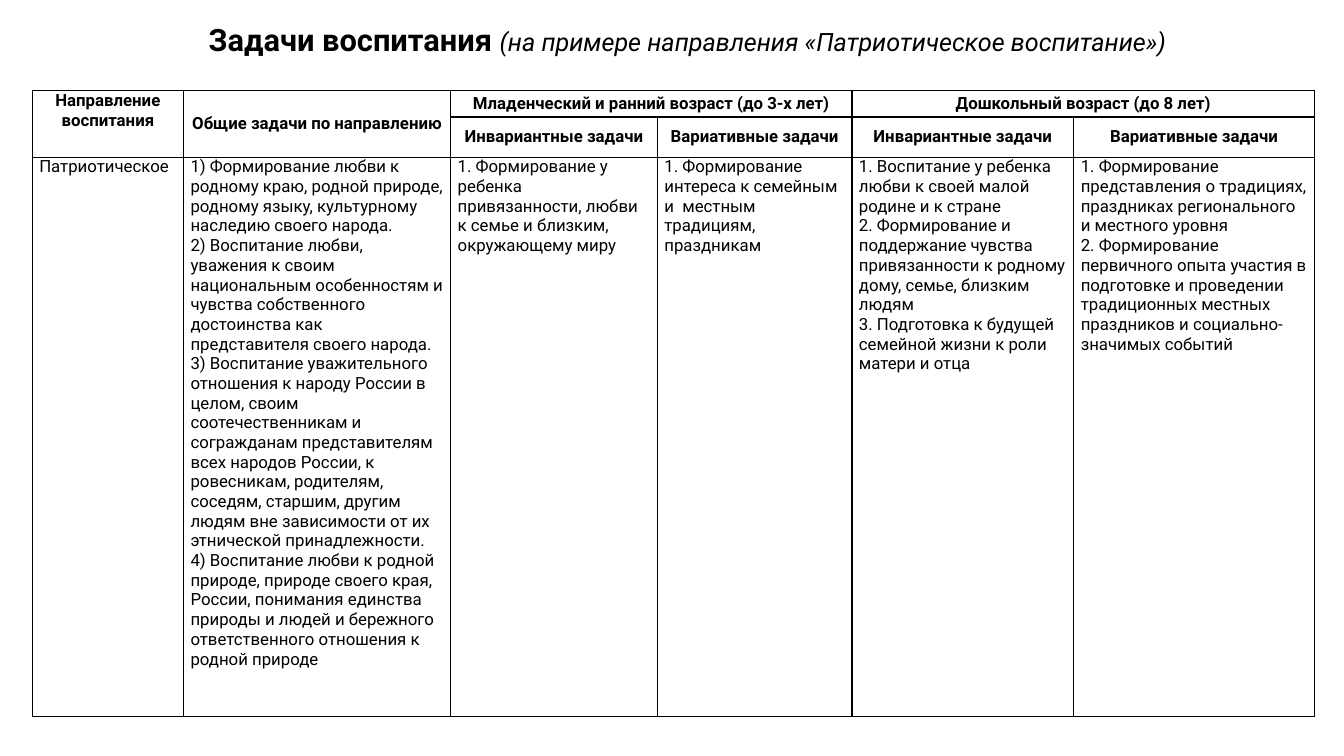
"""Build a one-slide table of patriotic upbringing tasks by age group."""
from dataclasses import dataclass

from lxml.etree import SubElement
from pptx import Presentation
from pptx.dml.color import RGBColor
from pptx.enum.text import MSO_ANCHOR, MSO_AUTO_SIZE, PP_ALIGN
from pptx.oxml.ns import qn
from pptx.slide import Slide
from pptx.table import Table, _Cell
from pptx.text.text import Font
from pptx.util import Inches, Pt

FONT = "Roboto"
BLACK = "000000"
WHITE = "FFFFFF"
COLUMN_WIDTHS = (1.5, 2.65, 2.05, 1.93, 2.2, 2.39)
ROW_HEIGHTS = (0.26, 0.26, 5.55)


@dataclass(frozen=True)
class Heading:
    row: int
    column: int
    text: str
    rows: int = 1
    columns: int = 1
    anchor: MSO_ANCHOR = MSO_ANCHOR.MIDDLE


@dataclass(frozen=True)
class TitlePart:
    text: str
    size: float
    bold: bool = False
    italic: bool = False


TITLE = (
    TitlePart("Задачи воспитания ", 22, bold=True),
    TitlePart("(на примере направления «Патриотическое воспитание»)", 18, italic=True),
)
HEADINGS = (
    Heading(0, 0, "Направление воспитания", rows=2, anchor=MSO_ANCHOR.TOP),
    Heading(0, 1, "Общие задачи по направлению", rows=2),
    Heading(0, 2, "Младенческий и ранний возраст (до 3-х лет)", columns=2),
    Heading(0, 4, "Дошкольный возраст (до 8 лет)", columns=2),
    *(Heading(1, column, "Инвариантные задачи") for column in (2, 4)),
    *(Heading(1, column, "Вариативные задачи") for column in (3, 5)),
)
TASKS = (
    ("Патриотическое",),
    (
        "1) Формирование любви к родному краю, родной природе, родному языку, "
        "культурному наследию своего народа.",
        "2) Воспитание любви, уважения к своим национальным особенностям и чувства "
        "собственного достоинства как представителя своего народа.",
        "3) Воспитание уважительного отношения к народу России в целом, своим "
        "соотечественникам и согражданам представителям всех народов России, к "
        "ровесникам, родителям, соседям, старшим, другим людям вне зависимости от их "
        "этнической принадлежности.",
        "4) Воспитание любви к родной природе, природе своего края, России, понимания "
        "единства природы и людей и бережного ответственного отношения к родной природе",
    ),
    (
        "1. Формирование у ребенка привязанности, любви к семье и близким, "
        "окружающему миру",
    ),
    ("1. Формирование интереса к семейным и  местным традициям, праздникам",),
    (
        "1. Воспитание у ребенка любви к своей малой родине и к стране",
        "2. Формирование и поддержание чувства привязанности к родному дому, семье, "
        "близким людям",
        "3. Подготовка к будущей семейной жизни к роли матери и отца",
    ),
    (
        "1. Формирование представления о традициях, праздниках регионального и "
        "местного уровня",
        "2. Формирование первичного опыта участия в подготовке и проведении "
        "традиционных местных праздников и социально-значимых событий",
    ),
)


def color(value: str) -> RGBColor:
    """Turn a hex string into a colour."""
    return RGBColor.from_string(value)


def style_font(font: Font, size: float, bold: bool, italic: bool = False) -> None:
    """Apply the common typeface and colour with the given size and style."""
    font.name, font.size, font.bold, font.italic = FONT, Pt(size), bold, italic
    font.color.rgb = color(BLACK)


def format_cell(cell: _Cell) -> None:
    """Give a cell a white fill, thin black borders and tight margins."""
    cell.margin_left = cell.margin_right = Inches(0.07)
    cell.margin_top = cell.margin_bottom = 0
    properties = cell._tc.get_or_add_tcPr()
    for side in ("lnL", "lnR", "lnT", "lnB"):
        line = SubElement(properties, qn(f"a:{side}"), w=str(Pt(1)))
        SubElement(SubElement(line, qn("a:solidFill")), qn("a:srgbClr"), val=BLACK)
    cell.fill.solid()
    cell.fill.fore_color.rgb = color(WHITE)


def write_cell(cell: _Cell, lines: tuple[str, ...], align: PP_ALIGN, bold: bool) -> None:
    """Write one paragraph per line into a cell."""
    cell.text = "\n".join(lines)
    for para in cell.text_frame.paragraphs:
        para.alignment = align
        style_font(para.font, 12, bold)


def add_title(page: Slide) -> None:
    """Place and fill the title placeholder."""
    box = page.shapes.title
    box.left, box.top = Inches(0.77), Inches(0.13)
    box.width, box.height = Inches(11.85), Inches(0.46)
    frame = box.text_frame
    frame.word_wrap = True
    frame.auto_size = MSO_AUTO_SIZE.SHAPE_TO_FIT_TEXT
    frame.vertical_anchor = MSO_ANCHOR.TOP
    para = frame.paragraphs[0]
    para.alignment = PP_ALIGN.CENTER
    para.line_spacing = 1.07
    para.space_before = Pt(0)
    para._p.get_or_add_pPr().set("marL", str(Inches(0.25)))
    for part in TITLE:
        span = para.add_run()
        span.text = part.text
        style_font(span.font, part.size, part.bold, part.italic)


def add_task_table(page: Slide) -> Table:
    """Add the empty bordered grid."""
    table = page.shapes.add_table(
        len(ROW_HEIGHTS), len(COLUMN_WIDTHS), Inches(0.32), Inches(0.9),
        Inches(sum(COLUMN_WIDTHS)), Inches(sum(ROW_HEIGHTS)),
    ).table
    table.first_row = table.horz_banding = False
    for column, width in zip(table.columns, COLUMN_WIDTHS):
        column.width = Inches(width)
    for row, height in zip(table.rows, ROW_HEIGHTS):
        row.height = Inches(height)
    for cell in table.iter_cells():
        format_cell(cell)
        style_font(cell.text_frame.paragraphs[0].font, 12, False)
    return table


def fill_table(table: Table) -> None:
    """Write the merged headings and the tasks below them."""
    for heading in HEADINGS:
        cell = table.cell(heading.row, heading.column)
        if heading.rows * heading.columns > 1:
            cell.merge(table.cell(heading.row + heading.rows - 1,
                                  heading.column + heading.columns - 1))
        cell.vertical_anchor = heading.anchor
        write_cell(cell, (heading.text,), PP_ALIGN.CENTER, True)
    for column, lines in enumerate(TASKS):
        write_cell(table.cell(2, column), lines, PP_ALIGN.LEFT, False)


def main() -> None:
    """Build and save the deck."""
    deck = Presentation()
    deck.slide_width, deck.slide_height = Inches(13.33), Inches(7.5)
    page = deck.slides.add_slide(deck.slide_layouts[5])
    fill_table(add_task_table(page))
    add_title(page)
    deck.save("out.pptx")


if __name__ == "__main__":
    main()
